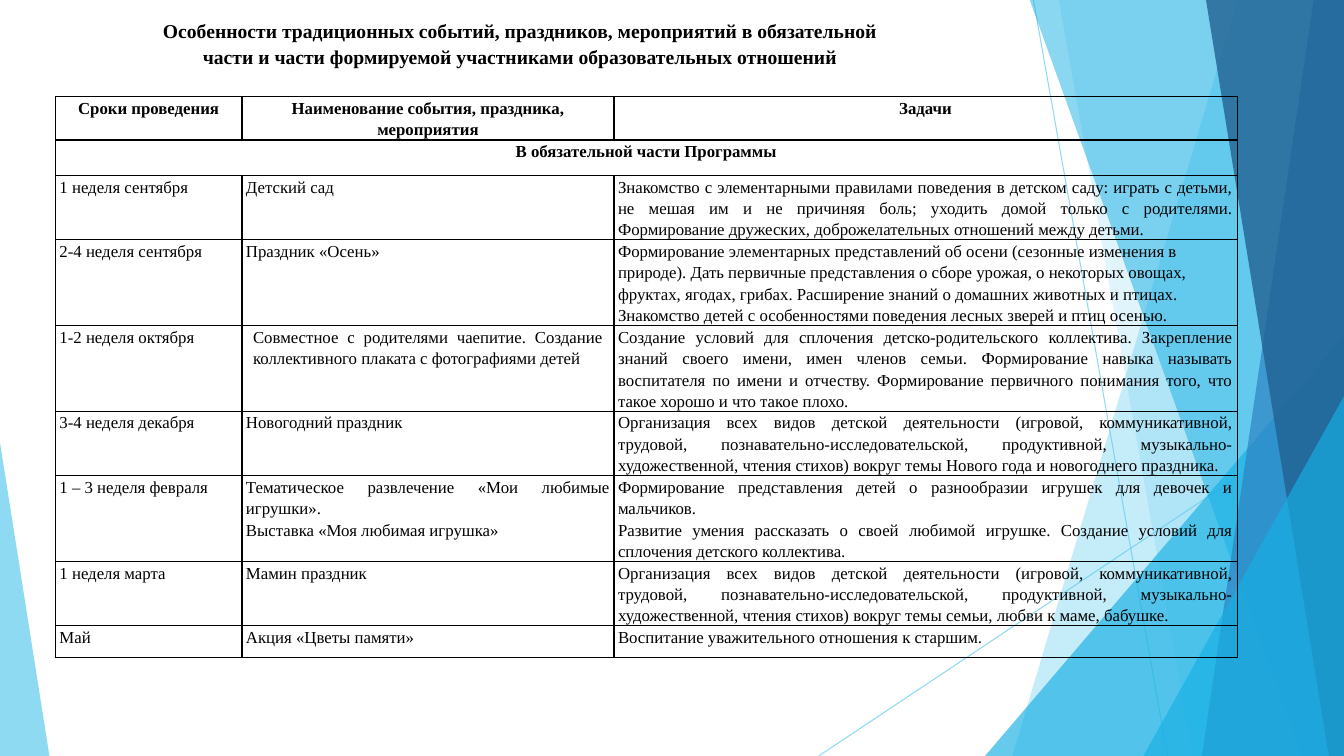
from lxml import etree
from pptx import Presentation
from pptx.dml.color import RGBColor
from pptx.enum.shapes import MSO_CONNECTOR as CONN, MSO_SHAPE as SHAPE
from pptx.enum.text import MSO_ANCHOR as ANCHOR, MSO_AUTO_SIZE as AUTO, PP_ALIGN as ALIGN
from pptx.oxml import parse_xml
from pptx.oxml.ns import nsdecls, qn
from pptx.util import Pt

PX = 9144  # 100 px to the inch
W, H = 1333, 750
FONT = "Times New Roman"
C = {"text": "000000", "sky": "5FCBEF", "cyan": "17B0E4", "blue": "2E83C3", "navy": "226292"}

TITLE = ("Особенности традиционных событий, праздников, мероприятий в обязательной "
         "части и части формируемой участниками образовательных отношений")
HEADERS = ("Сроки проведения", "Наименование события, праздника, мероприятия", "Задачи")
SECTION = "В обязательной части Программы"
ACTIVITIES = ("Организация всех видов детской деятельности (игровой, коммуникативной, трудовой, "
              "познавательно-исследовательской, продуктивной, музыкально-художественной, "
              "чтения стихов) вокруг темы ")
EVENTS = [
    ("1 неделя сентября", "Детский сад",
     "Знакомство с элементарными правилами поведения в детском саду: играть с детьми, "
     "не мешая им и не причиняя боль; уходить домой только с родителями. Формирование "
     "дружеских, доброжелательных отношений между детьми."),
    ("2-4 неделя сентября", "Праздник «Осень»",
     "Формирование элементарных представлений об осени (сезонные изменения в природе). "
     "Дать первичные представления о сборе урожая, о некоторых овощах, фруктах, ягодах, "
     "грибах. Расширение знаний о домашних животных и птицах. Знакомство детей с "
     "особенностями поведения лесных зверей и птиц осенью."),
    ("1-2 неделя октября",
     "Совместное с родителями чаепитие. Создание коллективного плаката с фотографиями детей",
     "Создание условий для сплочения детско-родительского коллектива. Закрепление знаний "
     "своего имени, имен членов семьи. Формирование навыка называть воспитателя по имени и "
     "отчеству. Формирование первичного понимания того, что такое хорошо и что такое плохо."),
    ("3-4 неделя декабря", "Новогодний праздник",
     ACTIVITIES + "Нового года и новогоднего праздника."),
    ("1 – 3 неделя февраля",
     "Тематическое развлечение «Мои любимые игрушки».\nВыставка «Моя любимая игрушка»",
     "Формирование представления детей о разнообразии игрушек для девочек и мальчиков.\n"
     "Развитие умения рассказать о своей любимой игрушке. Создание условий для сплочения "
     "детского коллектива."),
    ("1 неделя марта", "Мамин праздник", ACTIVITIES + "семьи, любви к маме, бабушке."),
    ("Май", "Акция «Цветы памяти»", "Воспитание уважительного отношения к старшим."),
]
COLS = (185, 369, 618)
ROWS = (43, 35, 63, 85, 85, 63, 85, 63, 32)
AUTUMN_TASKS, TEA_PARTY = (3, 2), (4, 1)  # cells with their own alignment or indent


def px(*lengths):
    return [n * PX for n in lengths]


def rgb(name):
    return RGBColor.from_string(C[name])


def set_alpha(fill_owner, percent):
    """Make the solid colour below this element partly transparent."""
    color = fill_owner.find(".//" + qn("a:srgbClr"))
    etree.SubElement(color, qn("a:alpha")).set("val", str(percent * 1000))


def paint(sp, color, percent):
    sp.shadow.inherit = False
    sp.fill.solid()
    sp.fill.fore_color.rgb = rgb(color)
    set_alpha(sp._element.spPr, percent)
    sp.line.fill.background()


def write(p, text, size, bold, align, spacing):
    p.alignment, p.line_spacing = align, spacing
    r = p.add_run()
    r.text = text
    r.font.name, r.font.size, r.font.bold = FONT, Pt(size), bold
    r.font.color.rgb = rgb("text")


# Background facets
def add_ray(s, x1, y1, x2, y2):
    ray = s.shapes.add_connector(CONN.STRAIGHT, *px(x1, y1, x2, y2))
    ray.line.width = Pt(0.75)
    ray.line.color.rgb = rgb("sky")
    set_alpha(ray.line._ln, 70)
    etree.SubElement(ray._element.spPr, qn("a:effectLst"))


def add_band(s, top_x, bottom_x, color, percent):
    """Four-sided band from a slanted left edge to the right slide edge."""
    fb = s.shapes.build_freeform(top_x, -1, scale=PX)
    fb.add_line_segments([(W, -1), (W, H), (bottom_x, H)], close=True)
    paint(fb.convert_to_shape(), color, percent)


def add_corner(s, x, y, w, apex, color, percent):
    """Triangle standing on the bottom slide edge."""
    sp = s.shapes.add_shape(SHAPE.ISOSCELES_TRIANGLE, *px(x, y, w, H - y))
    sp.adjustments[0] = apex
    paint(sp, color, percent)


def add_facets(s):
    add_ray(s, 1025, 0, 1158, H)
    add_ray(s, W, 403, 812, H)
    add_band(s, 1228, 1004, "sky", 36)
    add_band(s, 1050, 1183, "sky", 20)
    add_corner(s, 977, 333, 356, 1, "cyan", 66)
    add_band(s, 1021, 1291, "cyan", 50)
    add_band(s, 1303, 1192, "blue", 70)
    add_band(s, 1196, 1318, "navy", 80)
    add_corner(s, 1134, 393, 199, 1, "cyan", 66)
    add_corner(s, 0, 439, 49, 0, "sky", 70)


# Title
def add_title(s, x, y, w, h):
    title = s.shapes.title
    title.left, title.top, title.width, title.height = px(x, y, w, h)
    tf = title.text_frame
    tf.word_wrap, tf.auto_size = True, AUTO.NONE
    tf.vertical_anchor = ANCHOR.MIDDLE
    write(tf.paragraphs[0], TITLE, 14, True, ALIGN.CENTER, 1.1)


# Events table
def format_cell(cell):
    cell.margin_left = cell.margin_right = 4 * PX
    cell.margin_top = cell.margin_bottom = 0
    tcPr = cell._tc.get_or_add_tcPr()
    for side in ("lnL", "lnR", "lnT", "lnB"):
        tcPr.append(parse_xml(
            f'<a:{side} {nsdecls("a")} w="12700"><a:solidFill><a:srgbClr val="{C["text"]}"/>'
            f'</a:solidFill></a:{side}>'))
    cell.fill.background()


def add_events_table(s, x, y):
    rows = [HEADERS, (SECTION, "", "")] + EVENTS
    frame = s.shapes.add_table(len(ROWS), len(COLS), *px(x, y, sum(COLS), sum(ROWS)))
    table = frame.table
    table.first_row = table.horz_banding = False
    for column, width in zip(table.columns, COLS):
        column.width = width * PX
    for row, height in zip(table.rows, ROWS):
        row.height = height * PX
    table.cell(1, 0).merge(table.cell(1, 2))

    for i, texts in enumerate(rows):
        heading = i < 2
        for j, text in enumerate(texts):
            cell = table.cell(i, j)
            format_cell(cell)
            if cell.is_spanned:
                continue
            align = ALIGN.CENTER if heading else ALIGN.JUSTIFY
            if (i, j) == AUTUMN_TASKS:
                align = ALIGN.LEFT
            tf = cell.text_frame
            for k, line in enumerate(text.split("\n")):
                p = tf.add_paragraph() if k else tf.paragraphs[0]
                write(p, line, 12, heading, align, 1.15)
    pPr = table.cell(*TEA_PARTY).text_frame.paragraphs[0]._p.get_or_add_pPr()
    for side in ("marL", "marR"):
        pPr.set(side, str(7 * PX))


def main():
    prs = Presentation()
    prs.slide_width, prs.slide_height = px(W, H)
    s = prs.slides.add_slide(prs.slide_layouts[5])
    add_facets(s)
    add_events_table(s, 55, 96)
    add_title(s, 126, 12, 780, 60)
    prs.save("out.pptx")


if __name__ == "__main__":
    main()
